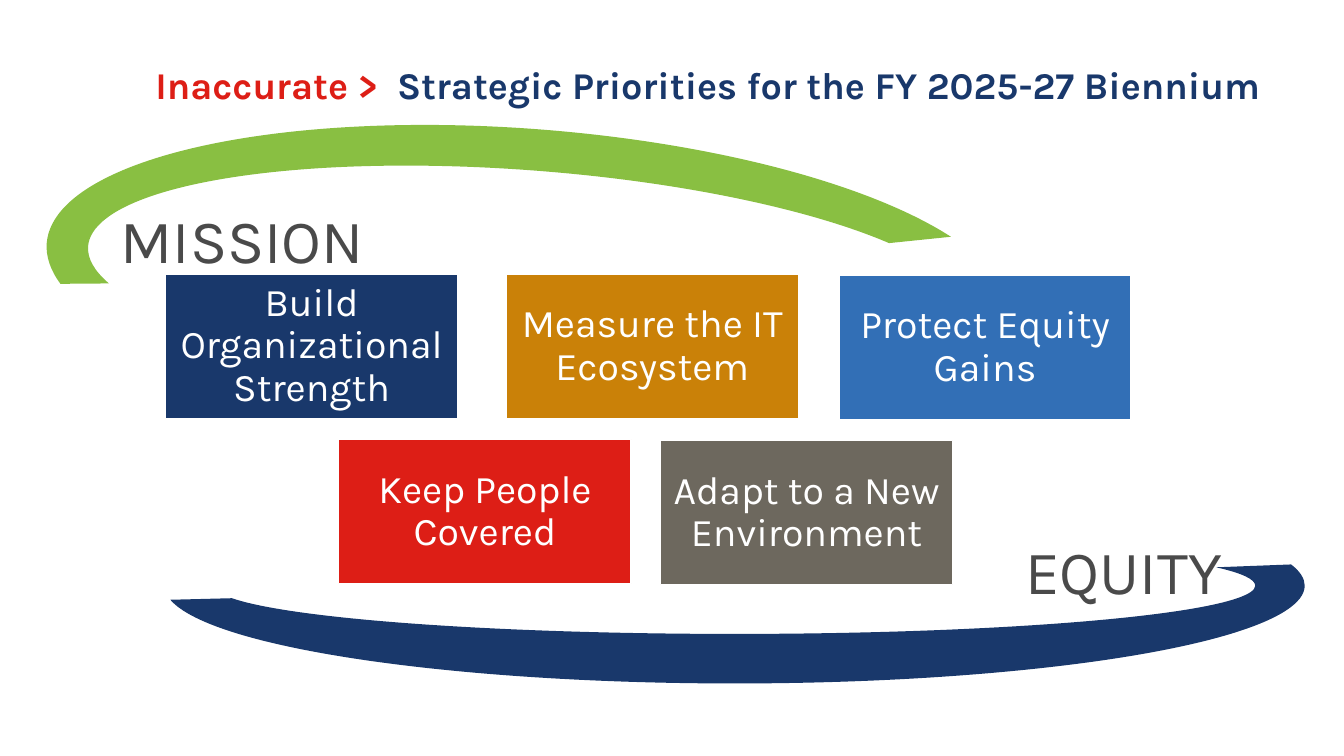
from pptx import Presentation
from pptx import util as u
from pptx.dml.color import RGBColor
from pptx.enum import shapes, text

W, H = 13.33, 7.5
FONT = "Karla"
COLORS = {"navy": "19386B", "red": "DD1E16", "gold": "CA8108", "blue": "326FB6",
          "taupe": "6D685E", "green": "89BF42", "gray": "4A4A4A", "white": "FFFFFF"}
CARD = (2.9, 1.43)
PRIORITIES = [
    (0, 0, "Build Organizational Strength", "navy"),
    (4.91, 1.65, "Adapt to a New Environment", "taupe"),
    (3.38, 0, "Measure the IT Ecosystem", "gold"),
    (1.72, 1.64, "Keep People Covered", "red"),
    (6.68, 0.01, "Protect Equity Gains", "blue"),
]


def rgb(name):
    return RGBColor.from_string(COLORS[name])


def inches(box):
    return [u.Inches(v) for v in box]


def write(tf, runs, size, bold=False, align="LEFT", anchor="TOP", spacing=1.0, inset=None):
    tf.word_wrap = True
    tf.auto_size = text.MSO_AUTO_SIZE.NONE
    tf.vertical_anchor = getattr(text.MSO_ANCHOR, anchor)
    if inset is not None:
        tf.margin_left = tf.margin_right = tf.margin_top = tf.margin_bottom = u.Inches(inset)
    p = tf.paragraphs[0]
    p.alignment = getattr(text.PP_ALIGN, align)
    p.line_spacing = spacing
    for words, color in runs:
        r = p.add_run()
        r.text = words
        r.font.name, r.font.size, r.font.bold = FONT, u.Pt(size), bold
        r.font.color.rgb = rgb(color)


def add_filled(s, kind, box, color):
    sp = s.shapes.add_shape(kind, *inches(box))
    sp.shadow.inherit = False
    sp.fill.solid()
    sp.fill.fore_color.rgb = rgb(color)
    sp.line.fill.background()
    return sp


def add_title(s, box):
    title = s.shapes.title
    title.left, title.top, title.width, title.height = inches(box)
    write(title.text_frame,
          [("Inaccurate > ", "red"),
           (" Strategic Priorities for the FY 2025-27 Biennium", "navy")],
          27, bold=True, anchor="MIDDLE", spacing=0.9)


def add_priorities(s, left, top):
    for dx, dy, words, color in PRIORITIES:
        sp = add_filled(s, shapes.MSO_SHAPE.RECTANGLE, (left + dx, top + dy, *CARD), color)
        sp.line.color.rgb = rgb("white")
        sp.line.width = u.Pt(1)
        write(sp.text_frame, [(words, "white")], 28, align="CENTER",
              anchor="MIDDLE", spacing=0.9, inset=0.12)


def add_swoosh(s, box, color, rotation, adjustments):
    sp = add_filled(s, shapes.MSO_SHAPE.BLOCK_ARC, box, color)
    sp.rotation = rotation
    for i, value in enumerate(adjustments):
        sp.adjustments[i] = value


def add_label(s, box, words, align):
    tb = s.shapes.add_textbox(*inches(box))
    write(tb.text_frame, [(words, "gray")], 44, align=align)


def build_slide(prs):
    s = prs.slides.add_slide(prs.slide_layouts[5])
    add_title(s, (1.44, 0.44, 11.5, 0.86))
    add_priorities(s, 1.64, 2.72)
    add_swoosh(s, (0.45, 1.28, 9.58, 3), "green", 4.4, (105.09, 209.84, 0.137))
    add_swoosh(s, (1.63, 4.84, 11.31, 1.94), "navy", 180, (106.69, 215.14, 0.253))
    add_label(s, (1.1, 1.95, 4.16, 1.14), "MISSION", "LEFT")
    add_label(s, (8.06, 5.24, 4.16, 1.14), "EQUITY", "RIGHT")


def main():
    prs = Presentation()
    prs.slide_width, prs.slide_height = inches((W, H))
    build_slide(prs)
    prs.save("out.pptx")


if __name__ == "__main__":
    main()
